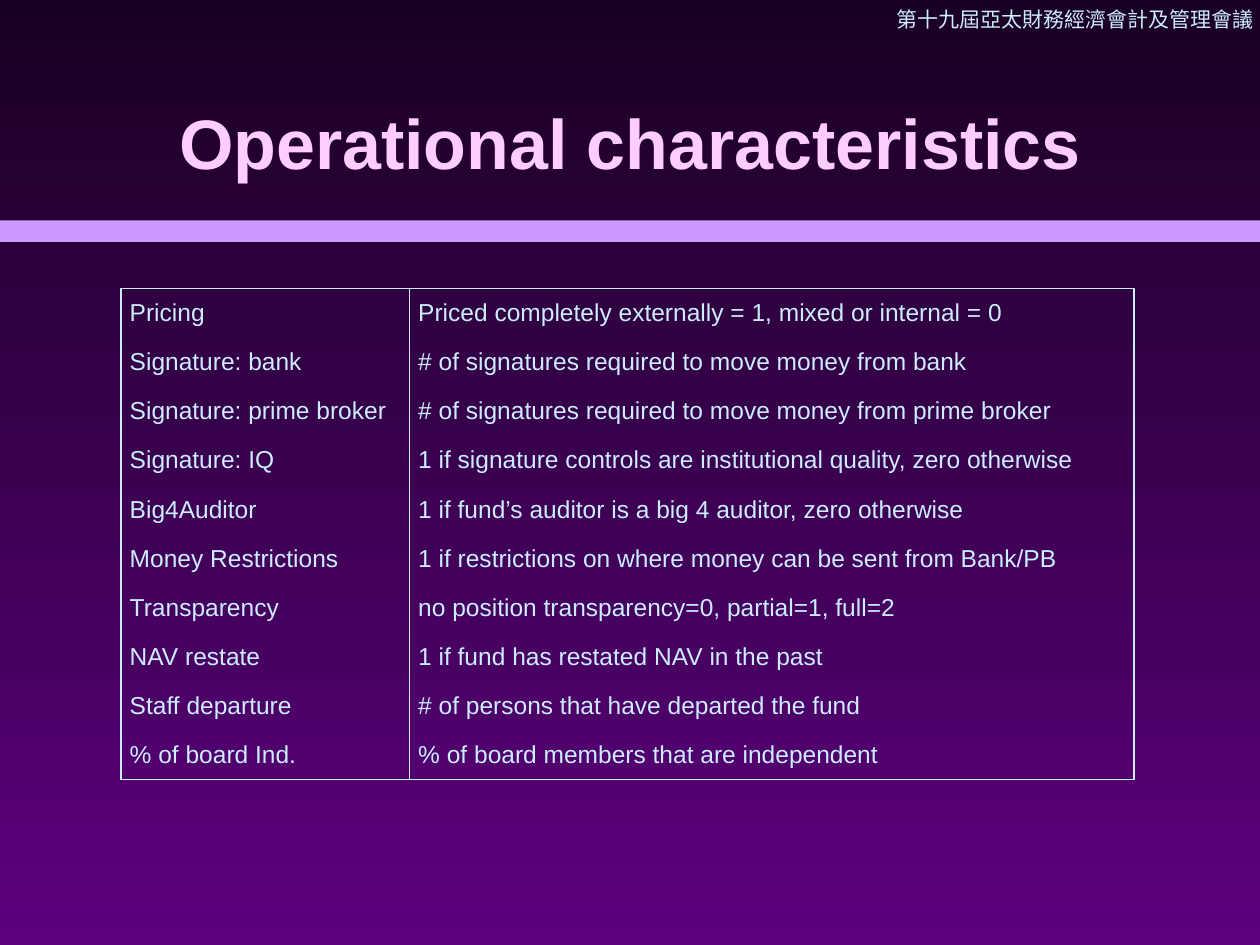
from lxml.etree import SubElement
from pptx import Presentation
from pptx.dml.color import RGBColor
from pptx.enum.shapes import MSO_SHAPE
from pptx.enum.text import MSO_ANCHOR, PP_ALIGN
from pptx.oxml.ns import qn
from pptx.util import Inches, Pt

NIGHT = RGBColor(0x19, 0x00, 0x22)
PURPLE = RGBColor(0x5D, 0x00, 0x7E)
LILAC = RGBColor(0xCC, 0x99, 0xFF)
PINK = RGBColor(0xFF, 0xCC, 0xFF)
PALE_BLUE = RGBColor(0xCC, 0xEC, 0xFF)

CHARACTERISTICS = [
    ("Pricing", "Priced completely externally = 1, mixed or internal = 0"),
    ("Signature: bank", "# of signatures required to move money from bank"),
    ("Signature: prime broker", "# of signatures required to move money from prime broker"),
    ("Signature: IQ", "1 if signature controls are institutional quality, zero otherwise"),
    ("Big4Auditor", "1 if fund’s auditor is a big 4 auditor, zero otherwise"),
    ("Money Restrictions", "1 if restrictions on where money can be sent from Bank/PB"),
    ("Transparency", "no position transparency=0, partial=1, full=2"),
    ("NAV restate", "1 if fund has restated NAV in the past"),
    ("Staff departure", "# of persons that have departed the fund"),
    ("% of board Ind.", "% of board members that are independent"),
]
COLUMN_WIDTHS = (2.29, 5.75)
ROW_HEIGHT = 0.39


def paint_background(slide):
    fill = slide.background.fill
    fill.gradient()
    fill.gradient_angle = 270
    for stop, color in zip(fill.gradient_stops, (NIGHT, PURPLE)):
        stop.color.rgb = color


def write(frame, text, size, font_name, color, bold=False, align=PP_ALIGN.LEFT):
    paragraph = frame.paragraphs[0]
    paragraph.alignment = align
    run = paragraph.add_run()
    run.text = text
    run.font.size = Pt(size)
    run.font.name = font_name
    run.font.bold = bold
    run.font.color.rgb = color


def add_text(slide, left, top, width, height, text, size, font_name, color,
             anchor=MSO_ANCHOR.TOP, **style):
    frame = slide.shapes.add_textbox(
        Inches(left), Inches(top), Inches(width), Inches(height)).text_frame
    frame.word_wrap = True
    frame.vertical_anchor = anchor
    write(frame, text, size, font_name, color, **style)


def add_band(slide):
    band = slide.shapes.add_shape(
        MSO_SHAPE.RECTANGLE, 0, Inches(1.75), Inches(10), Inches(0.17))
    band.shadow.inherit = False
    band.fill.solid()
    band.fill.fore_color.rgb = LILAC
    band.line.fill.background()


def set_borders(cell, visible):
    properties = cell._tc.get_or_add_tcPr()
    for side in "LRTB":
        line = SubElement(properties, qn(f"a:ln{side}"), w=str(Pt(1)))
        if side in visible:
            fill = SubElement(line, qn("a:solidFill"))
            SubElement(fill, qn("a:srgbClr"), val=str(PALE_BLUE))
        else:
            SubElement(line, qn("a:noFill"))


def add_characteristics(slide):
    last = len(CHARACTERISTICS) - 1
    table = slide.shapes.add_table(
        len(CHARACTERISTICS), len(COLUMN_WIDTHS), Inches(0.96), Inches(2.29),
        Inches(sum(COLUMN_WIDTHS)), Inches(ROW_HEIGHT * len(CHARACTERISTICS))).table
    table.first_row = table.horz_banding = False
    for column, width in zip(table.columns, COLUMN_WIDTHS):
        column.width = Inches(width)

    for r, entries in enumerate(CHARACTERISTICS):
        table.rows[r].height = Inches(ROW_HEIGHT)
        visible = "LR" + ("T" if r == 0 else "") + ("B" if r == last else "")
        for c, entry in enumerate(entries):
            cell = table.cell(r, c)
            cell.margin_left = cell.margin_right = Inches(0.07)
            cell.margin_top = cell.margin_bottom = 0
            cell.vertical_anchor = MSO_ANCHOR.MIDDLE
            set_borders(cell, visible)
            cell.fill.background()
            write(cell.text_frame, entry, 14, "Arial", PALE_BLUE)


def main():
    presentation = Presentation()
    presentation.slide_width = Inches(10)
    presentation.slide_height = Inches(7.5)
    slide = presentation.slides.add_slide(presentation.slide_layouts[6])

    # Backdrop and conference name
    paint_background(slide)
    add_band(slide)
    add_text(slide, 7.02, 0, 5.96, 0.3, "第十九屆亞太財務經濟會計及管理會議",
             12, "Times New Roman", PALE_BLUE)

    # Title and variable definitions
    add_text(slide, 0.75, 0.5, 8.5, 1.25, "Operational characteristics",
             40, "Arial", PINK, MSO_ANCHOR.MIDDLE, bold=True, align=PP_ALIGN.CENTER)
    add_characteristics(slide)

    presentation.save("out.pptx")


if __name__ == "__main__":
    main()
